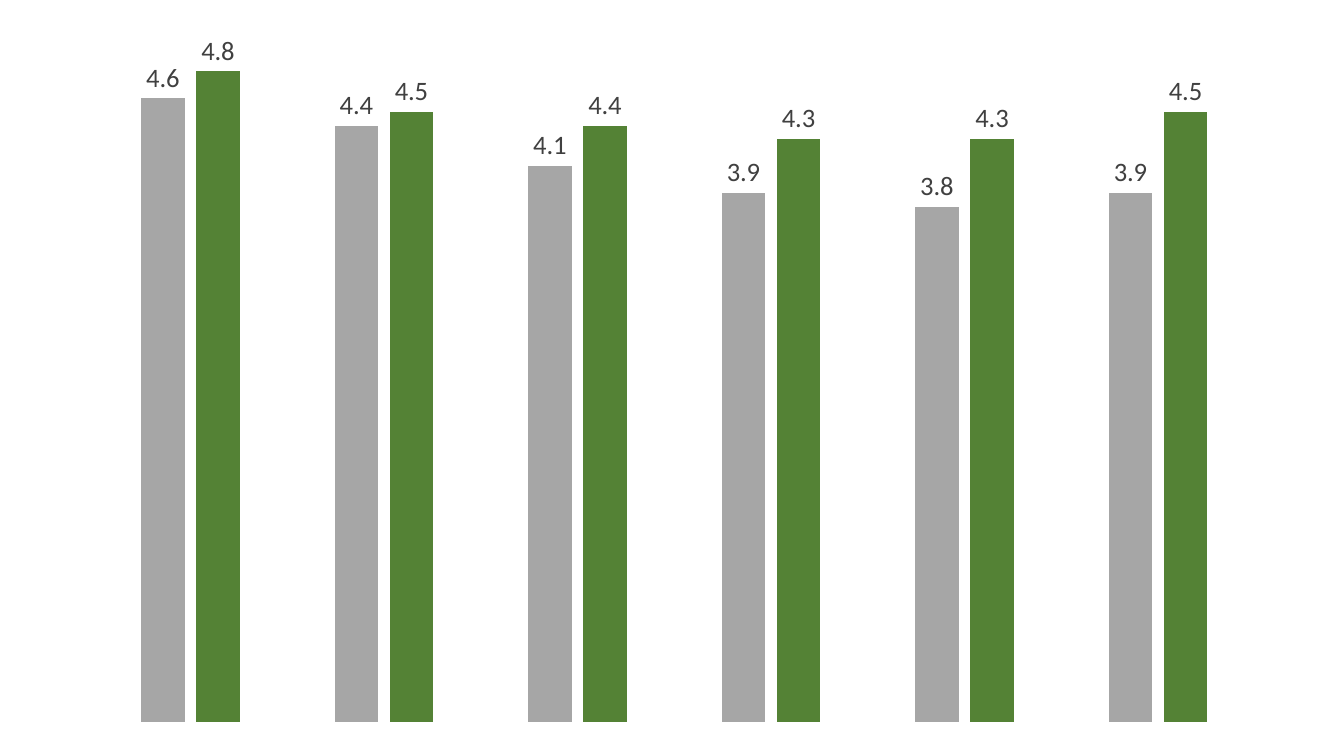
from lxml.etree import SubElement
from pptx import Presentation
from pptx.chart.data import CategoryChartData
from pptx.dml.color import RGBColor
from pptx.enum.chart import XL_CHART_TYPE, XL_LABEL_POSITION
from pptx.oxml.ns import qn
from pptx.util import Cm, Pt

COLOURS = {"Series 1": "A6A6A6", "Series 2": "548235", "label": "404040", "text": "000000"}
SCORES = {
    "Series 1": (4.6, 4.4, 4.1, 3.9, 3.8, 3.9),
    "Series 2": (4.8, 4.5, 4.4, 4.3, 4.3, 4.5),
}
FONT = "Calibri"


def format_font(font, size, colour):
    """Set the typeface, size and colour of a chart font."""
    font.name = FONT
    font.size = Pt(size)
    font.color.rgb = RGBColor.from_string(COLOURS[colour])


def set_plot_layout(chart, left, top, width, height):
    """Place the inner plot area by fractions of the chart's size."""
    plot_area = chart.plots[0]._element.getparent()
    for old_layout in plot_area.findall(qn("c:layout")):
        plot_area.remove(old_layout)
    layout = SubElement(plot_area, qn("c:layout"))
    plot_area.insert(0, layout)
    manual = SubElement(layout, qn("c:manualLayout"))
    settings = {
        "layoutTarget": "inner", "xMode": "edge", "yMode": "edge",
        "x": left, "y": top, "w": width, "h": height,
    }
    for name, value in settings.items():
        SubElement(manual, qn(f"c:{name}")).set("val", str(value))


def format_series(series):
    """Colour a series and show its values above the columns."""
    series.format.fill.solid()
    series.format.fill.fore_color.rgb = RGBColor.from_string(COLOURS[series.name])
    series.invert_if_negative = False
    labels = series.data_labels
    labels.show_value = True
    labels.position = XL_LABEL_POSITION.OUTSIDE_END
    labels.number_format = "0.0"
    labels.number_format_is_linked = False
    format_font(labels.font, 19, "label")


def add_score_chart(slide, left, top, width, height):
    """Add the paired column chart inside the given box."""
    chart_data = CategoryChartData(number_format="0.0")
    chart_data.categories = [str(number) for number in range(1, 7)]
    for name, values in SCORES.items():
        chart_data.add_series(name, values)
    chart = slide.shapes.add_chart(
        XL_CHART_TYPE.COLUMN_CLUSTERED, left, top, width, height, chart_data
    ).chart
    chart.has_title = False
    chart.has_legend = False
    format_font(chart.font, 10, "text")
    chart.category_axis.visible = False
    value_axis = chart.value_axis
    value_axis.visible = False
    value_axis.has_major_gridlines = False
    value_axis.minimum_scale = 0
    value_axis.maximum_scale = 5
    value_axis.major_unit = 1
    plot = chart.plots[0]
    plot.gap_width = 219
    plot.overlap = -27
    plot.vary_by_categories = False
    for series in plot.series:
        format_series(series)
    set_plot_layout(chart, 0.02, 0.02, 0.96, 0.96)


def main():
    """Build and save the presentation."""
    presentation = Presentation()
    presentation.slide_width = Cm(33.87)
    presentation.slide_height = Cm(19.05)
    slide = presentation.slides.add_slide(presentation.slide_layouts[6])
    add_score_chart(slide, Cm(1.75), Cm(0.76), Cm(30.48), Cm(17.78))
    presentation.save("out.pptx")


if __name__ == "__main__":
    main()
